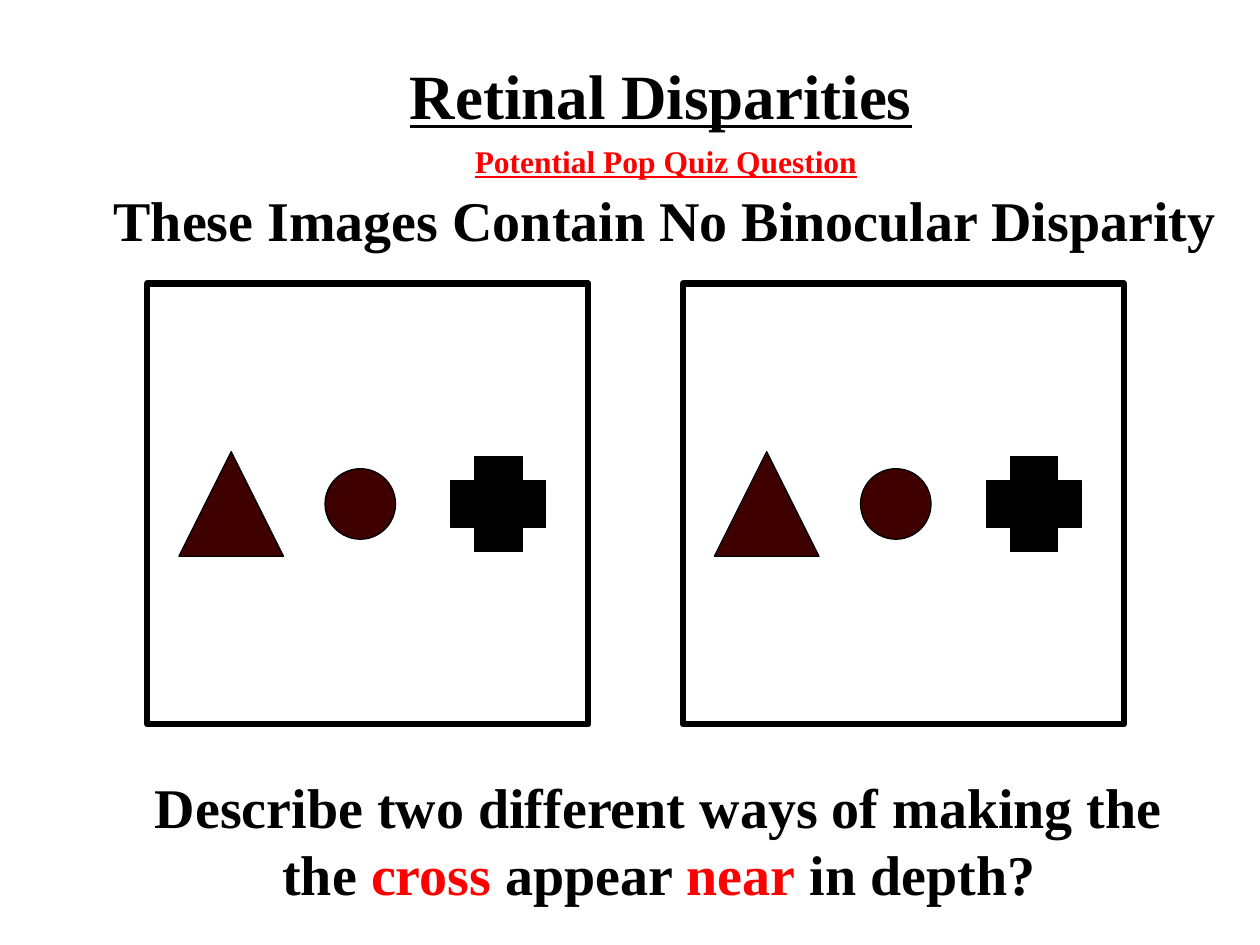
from pptx import Presentation
from pptx.dml.color import RGBColor
from pptx.enum.shapes import MSO_SHAPE as Shape
from pptx.enum.text import MSO_ANCHOR as Anchor, MSO_AUTO_SIZE as AutoSize, PP_ALIGN as Align
from pptx.util import Inches, Pt

BLACK = RGBColor(0x00, 0x00, 0x00)
RED = RGBColor(0xFF, 0x00, 0x00)
MAROON = RGBColor(0x3F, 0x00, 0x00)
FONT = "Times New Roman"

PANEL_LEFTS = (1.17, 5.42)
PANEL_TOP = 2.25
PANEL_SIZE = 3.5
# preset, offset from the panel's left edge, size, fill
FIGURES = (
    (Shape.ISOSCELES_TRIANGLE, 0.25, 0.83, MAROON),
    (Shape.CROSS, 2.41, 0.75, BLACK),
    (Shape.OVAL, 1.41, 0.56, MAROON),
)


def write_text(frame, lines, size, color=BLACK, underline=None, align=Align.CENTER):
    """Fill a frame; each line is a list of strings or (string, color) pairs."""
    for index, line in enumerate(lines):
        paragraph = frame.paragraphs[0] if index == 0 else frame.add_paragraph()
        paragraph.alignment = align
        for part in line:
            text, run_color = (part, color) if isinstance(part, str) else part
            run = paragraph.add_run()
            run.text = text
            font = run.font
            font.name, font.size, font.bold = FONT, Pt(size), True
            font.underline = underline
            font.color.rgb = run_color


def place(shape, left, top, width, height):
    shape.left, shape.top = Inches(left), Inches(top)
    shape.width, shape.height = Inches(width), Inches(height)


def set_title(slide, text):
    title = slide.shapes.title
    place(title, 0.83, 0.25, 8.83, 1)
    title.text_frame.vertical_anchor = Anchor.MIDDLE
    title.text_frame.auto_size = AutoSize.NONE
    write_text(title.text_frame, [[text]], 36, underline=True)


def add_text(slide, box, lines, size, **text_format):
    frame = slide.shapes.add_textbox(*map(Inches, box)).text_frame
    frame.word_wrap = False
    frame.auto_size = AutoSize.SHAPE_TO_FIT_TEXT
    write_text(frame, lines, size, **text_format)


def add_square_shape(shapes, preset, left, top, size, fill=None, line_width=0.75):
    shape = shapes.add_shape(preset, *map(Inches, (left, top, size, size)))
    shape.shadow.inherit = False
    if fill is None:
        shape.fill.background()
    else:
        shape.fill.solid()
        shape.fill.fore_color.rgb = fill
    shape.line.color.rgb = BLACK
    shape.line.width = Pt(line_width)


def add_panel(slide, left):
    """Add one eye's view: a frame with the figures centred on its height."""
    shapes = slide.shapes.add_group_shape().shapes
    add_square_shape(shapes, Shape.RECTANGLE, left, PANEL_TOP, PANEL_SIZE, line_width=3.5)
    for preset, offset, size, fill in FIGURES:
        top = PANEL_TOP + (PANEL_SIZE - size) / 2
        add_square_shape(shapes, preset, left + offset, top, size, fill)


def main():
    presentation = Presentation()
    presentation.slide_width, presentation.slide_height = Inches(10), Inches(7.5)
    slide = presentation.slides.add_slide(presentation.slide_layouts[5])
    set_title(slide, "Retinal Disparities")
    add_text(slide, (0.8, 1.42, 8.96, 0.63),
             [["These Images Contain No Binocular Disparity"]], 32)
    for left in PANEL_LEFTS:
        add_panel(slide, left)
    question = [
        ["Describe two different ways of making the"],
        ["the ", ("cross", RED), " appear ", ("near", RED), " in depth?"],
    ]
    add_text(slide, (1.13, 6.08, 8.2, 1.17), question, 32)
    add_text(slide, (3.67, 1.08, 3.24, 0.4), [["Potential Pop Quiz Question"]], 18,
             color=RED, underline=True, align=Align.LEFT)
    presentation.save("out.pptx")


if __name__ == "__main__":
    main()
